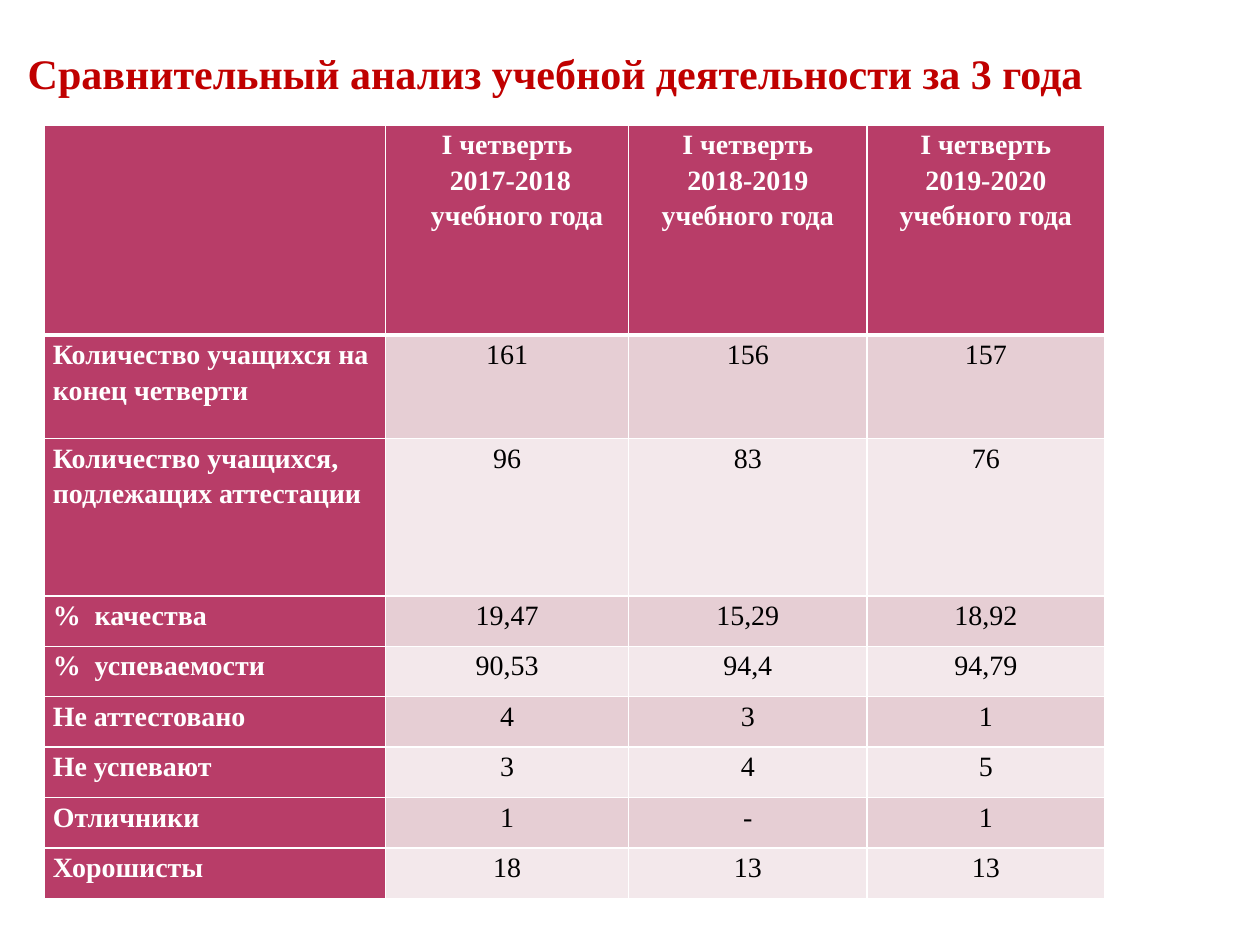
from lxml.etree import SubElement
from pptx import Presentation
from pptx.dml.color import RGBColor
from pptx.enum.text import MSO_ANCHOR, MSO_AUTO_SIZE, PP_ALIGN
from pptx.oxml.ns import qn
from pptx.util import Inches, Pt

FONT = "Times New Roman"
COLORS = {
    "title": "C00000",
    "header": "B83D68",
    "odd": "E6CED4",
    "even": "F3E8EB",
    "white": "FFFFFF",
    "black": "000000",
}
COLUMN_WIDTHS = [2.71, 1.93, 1.89, 1.89]
ROW_HEIGHTS = [1.67, 0.82, 1.25] + [0.4] * 6
ROWS = [
    ["", "I четверть\n2017-2018\nучебного года",
     "I четверть\n2018-2019 учебного года", "I четверть\n2019-2020 учебного года"],
    ["Количество учащихся на конец четверти", "161", "156", "157"],
    ["Количество учащихся,\nподлежащих аттестации", "96", "83", "76"],
    ["%  качества", "19,47", "15,29", "18,92"],
    ["%  успеваемости", "90,53", "94,4", "94,79"],
    ["Не аттестовано", "4", "3", "1"],
    ["Не успевают", "3", "4", "5"],
    ["Отличники", "1", "-", "1"],
    ["Хорошисты", "18", "13", "13"],
]
YEAR_INDENTS = {1: 0.44, 2: 0.29}


def style_font(font, size, color, bold):
    font.name = FONT
    font.size = Pt(size)
    font.bold = bold
    font.color.rgb = RGBColor.from_string(COLORS[color])


def add_border(cell, side, width):
    line = SubElement(cell._tc.get_or_add_tcPr(), qn(f"a:{side}"), w=str(Pt(width)))
    fill = SubElement(line, qn("a:solidFill"))
    SubElement(fill, qn("a:srgbClr"), val=COLORS["white"])


deck = Presentation()
deck.slide_width = Inches(10)
deck.slide_height = Inches(7.5)
page = deck.slides.add_slide(deck.slide_layouts[5])

title = page.shapes.title
title.left, title.top = Inches(0.12), Inches(0.28)
title.width, title.height = Inches(8.66), Inches(0.98)
frame = title.text_frame
frame.text = "Сравнительный анализ учебной деятельности за 3 года"
frame.word_wrap = False
frame.auto_size = MSO_AUTO_SIZE.NONE
frame.vertical_anchor = MSO_ANCHOR.TOP
frame.margin_top = Inches(0.1)
frame.paragraphs[0].alignment = PP_ALIGN.LEFT
style_font(frame.paragraphs[0].font, 24, "title", True)

table = page.shapes.add_table(
    len(ROWS), len(COLUMN_WIDTHS), Inches(0.35), Inches(0.99),
    Inches(sum(COLUMN_WIDTHS)), Inches(sum(ROW_HEIGHTS))).table
for column, width in zip(table.columns, COLUMN_WIDTHS):
    column.width = Inches(width)
for row, height in zip(table.rows, ROW_HEIGHTS):
    row.height = Inches(height)

for row_index, texts in enumerate(ROWS):
    for column_index, text in enumerate(texts):
        cell = table.cell(row_index, column_index)
        is_heading = row_index == 0 or column_index == 0
        cell.margin_left = cell.margin_right = Inches(0.07)
        cell.margin_top = cell.margin_bottom = 0

        add_border(cell, "lnL", 1)
        add_border(cell, "lnR", 1)
        add_border(cell, "lnT", 3 if row_index == 1 else 1)
        add_border(cell, "lnB", 3 if row_index == 0 else 1)
        band = "header" if is_heading else "odd" if row_index % 2 else "even"
        cell.fill.solid()
        cell.fill.fore_color.rgb = RGBColor.from_string(COLORS[band])

        cell.text = text
        for line_index, paragraph in enumerate(cell.text_frame.paragraphs):
            paragraph.line_spacing = 1.15
            paragraph.alignment = PP_ALIGN.CENTER if column_index else PP_ALIGN.LEFT
            if (row_index, column_index) == (0, 1) and line_index in YEAR_INDENTS:
                paragraph.alignment = PP_ALIGN.LEFT
                indent = Inches(YEAR_INDENTS[line_index])
                paragraph._p.get_or_add_pPr().set("marL", str(indent))
            style_font(paragraph.font, 16, "white" if is_heading else "black", is_heading)

deck.save("out.pptx")
